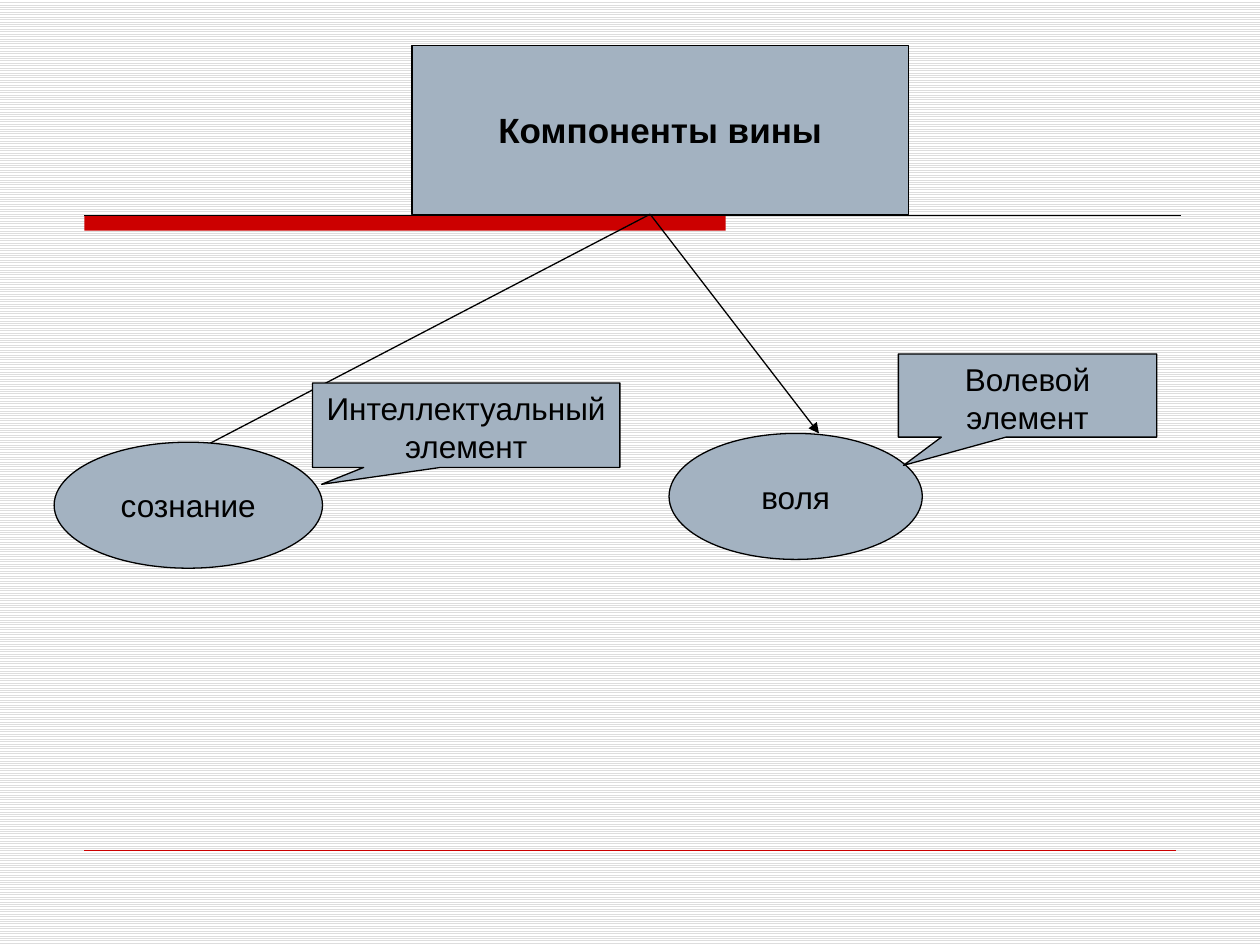
from lxml import etree
from pptx import Presentation
from pptx.dml.color import RGBColor
from pptx.enum.dml import MSO_PATTERN
from pptx.enum.shapes import MSO_CONNECTOR, MSO_SHAPE
from pptx.enum.text import MSO_ANCHOR, PP_ALIGN
from pptx.oxml.ns import qn
from pptx.util import Inches, Pt

STRAIGHT = MSO_CONNECTOR.STRAIGHT
RECTANGLE = MSO_SHAPE.RECTANGLE
OVAL = MSO_SHAPE.OVAL
CALLOUT = MSO_SHAPE.RECTANGULAR_CALLOUT
LIGHT_STRIPES = MSO_PATTERN.LIGHT_HORIZONTAL
TOP = MSO_ANCHOR.TOP
MIDDLE = MSO_ANCHOR.MIDDLE
CENTER = PP_ALIGN.CENTER

COLORS = {
    "ink": "000000",
    "panel": "A3B2C1",
    "accent": "CC0000",
    "stripe": "DDDDDD",
    "paper": "FFFFFF",
}


def color(name):
    return RGBColor.from_string(COLORS[name])


def paint(shape, fill="panel", outline="ink"):
    shape.fill.solid()
    shape.fill.fore_color.rgb = color(fill)
    if outline:
        shape.line.color.rgb = color(outline)
        shape.line.width = Pt(0.75)
    else:
        shape.line.fill.background()


def write(shape, text, size=18, bold=False, anchor=MIDDLE, wrap=False):
    frame = shape.text_frame
    frame.word_wrap = wrap
    frame.vertical_anchor = anchor
    paragraph = frame.paragraphs[0]
    paragraph.alignment = CENTER
    run = paragraph.add_run()
    run.text = text
    run.font.name = "Arial"
    run.font.size = Pt(size)
    run.font.bold = bold
    run.font.color.rgb = color("ink")


def add_panel(slide, preset, box, fill="panel", outline="ink"):
    panel = slide.shapes.add_shape(preset, *map(Inches, box))
    panel.shadow.inherit = False
    paint(panel, fill, outline)
    return panel


def add_title(slide, text, box):
    title = slide.shapes.title
    title.left, title.top, title.width, title.height = map(Inches, box)
    paint(title)
    write(title, text, size=20, bold=True)


def add_component(slide, text, box):
    write(add_panel(slide, OVAL, box), text)


def add_callout(slide, text, box, tip):
    callout = add_panel(slide, CALLOUT, box)
    callout.adjustments[0], callout.adjustments[1] = tip
    write(callout, text, anchor=TOP, wrap=True)


def add_line(slide, start, end, stroke="ink", width=0.75, arrow=False):
    line = slide.shapes.add_connector(STRAIGHT, *map(Inches, start + end))
    line.line.color.rgb = color(stroke)
    line.line.width = Pt(width)
    properties = line.line._get_or_add_ln()
    if arrow:
        etree.SubElement(properties, qn("a:tailEnd"), type="triangle")
    etree.SubElement(properties.getparent(), qn("a:effectLst"))


def add_backdrop(slide):
    stripes = slide.background.fill
    stripes.patterned()
    stripes.pattern = LIGHT_STRIPES
    stripes.fore_color.rgb = color("stripe")
    stripes.back_color.rgb = color("paper")
    add_panel(slide, RECTANGLE, (0.67, 1.71, 5.09, 0.12), "accent", None)
    add_line(slide, (0.67, 1.71), (9.37, 1.71))
    add_line(slide, (0.67, 6.75), (9.33, 6.75), stroke="accent", width=0.25)


def main():
    deck = Presentation()
    deck.slide_width, deck.slide_height = Inches(10), Inches(7.5)
    slide = deck.slides.add_slide(deck.slide_layouts[5])

    add_backdrop(slide)
    add_title(slide, "Компоненты вины", (3.27, 0.36, 3.94, 1.34))

    branching_point = (5.16, 1.7)
    for branch_end in ((1.53, 3.59), (6.5, 3.44)):
        add_line(slide, branching_point, branch_end, arrow=True)

    add_component(slide, "сознание", (0.43, 3.51, 2.13, 1))
    add_component(slide, "воля", (5.31, 3.44, 2.01, 1))
    add_callout(slide, "Интеллектуальный элемент",
                (2.48, 3.04, 2.44, 0.67), (-0.47, 0.7))
    add_callout(slide, "Волевой элемент",
                (7.13, 2.81, 2.05, 0.66), (-0.48, 0.84))

    deck.save("out.pptx")


if __name__ == "__main__":
    main()
